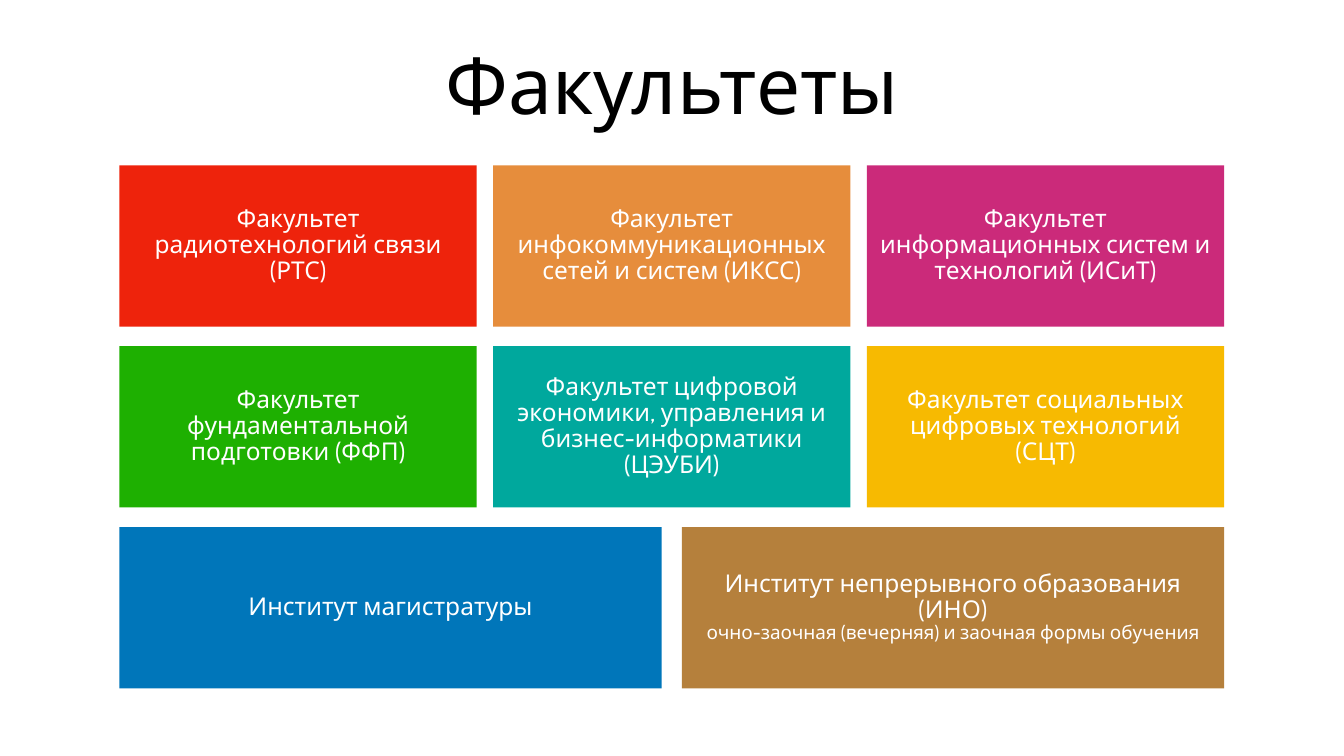
from typing import NamedTuple

from pptx import Presentation
from pptx.dml.color import RGBColor
from pptx.enum.shapes import MSO_SHAPE
from pptx.enum.text import MSO_ANCHOR, MSO_AUTO_SIZE, PP_ALIGN
from pptx.util import Inches, Pt

FONT = "Cabin"
GRID_LEFT, GRID_TOP, GRID_WIDTH = 2.37, 3.28, 21.92
TILE_HEIGHT, ROW_PITCH = 3.2, 3.59


class Faculty(NamedTuple):
    label: str
    color: str
    note: str = ""


class Row(NamedTuple):
    gap: float
    faculties: list[Faculty]


ROWS = [
    Row(0.325, [
        Faculty("Факультет радиотехнологий связи (РТС)", "EE230C"),
        Faculty("Факультет инфокоммуникационных сетей и систем (ИКСС)", "E68D3C"),
        Faculty("Факультет информационных систем и технологий (ИСиТ)", "CB2A7A"),
    ]),
    Row(0.325, [
        Faculty("Факультет фундаментальной подготовки (ФФП)", "1EB001"),
        Faculty("Факультет цифровой экономики, управления и бизнес-информатики (ЦЭУБИ)", "00A89D"),
        Faculty("Факультет социальных цифровых технологий (СЦТ)", "F7BA01"),
    ]),
    Row(0.4, [
        Faculty("Институт магистратуры", "0076BA"),
        Faculty("Институт непрерывного образования (ИНО)", "B5803C",
                "очно-заочная (вечерняя) и заочная формы обучения"),
    ]),
]


def rgb(color: str) -> RGBColor:
    return RGBColor.from_string(color)


def prepare_frame(frame, inset: float) -> None:
    frame.word_wrap = True
    frame.auto_size = MSO_AUTO_SIZE.NONE
    frame.vertical_anchor = MSO_ANCHOR.MIDDLE
    frame.margin_left = frame.margin_right = Inches(inset)
    frame.margin_top = frame.margin_bottom = Inches(inset)


def write(paragraph, text: str, size: float, color: str, spacing: float) -> None:
    paragraph.text = text
    paragraph.alignment = PP_ALIGN.CENTER
    paragraph.line_spacing = spacing
    for run in paragraph.runs:
        run.font.name = FONT
        run.font.size = Pt(size)
        run.font.color.rgb = rgb(color)


def draw_tile(slide, faculty: Faculty, left: float, top: float, width: float) -> None:
    tile = slide.shapes.add_shape(MSO_SHAPE.RECTANGLE, Inches(left), Inches(top),
                                  Inches(width), Inches(TILE_HEIGHT))
    tile.shadow.inherit = False
    tile.fill.solid()
    tile.fill.fore_color.rgb = rgb(faculty.color)
    tile.line.fill.background()
    frame = tile.text_frame
    prepare_frame(frame, 0.21)
    write(frame.paragraphs[0], faculty.label, 35, "FFFFFF", 0.88)
    if faculty.note:
        write(frame.add_paragraph(), faculty.note, 27, "FFFFFF", 0.88)


def draw_row(slide, row: Row, top: float) -> None:
    count = len(row.faculties)
    width = (GRID_WIDTH - row.gap * (count - 1)) / count
    for column, faculty in enumerate(row.faculties):
        draw_tile(slide, faculty, GRID_LEFT + column * (width + row.gap), top, width)


def main() -> None:
    presentation = Presentation()
    presentation.slide_width = Inches(26.67)
    presentation.slide_height = Inches(15)
    slide = presentation.slides.add_slide(presentation.slide_layouts[5])

    # Heading
    heading = slide.shapes.title
    heading.left, heading.top = Inches(1.85), Inches(0.39)
    heading.width, heading.height = Inches(22.97), Inches(2.5)
    prepare_frame(heading.text_frame, 0.06)
    write(heading.text_frame.paragraphs[0], "Факультеты", 112, "000000", 1.0)

    # Faculties and institutes
    for index, row in enumerate(ROWS):
        draw_row(slide, row, GRID_TOP + index * ROW_PITCH)

    presentation.save("out.pptx")


if __name__ == "__main__":
    main()
